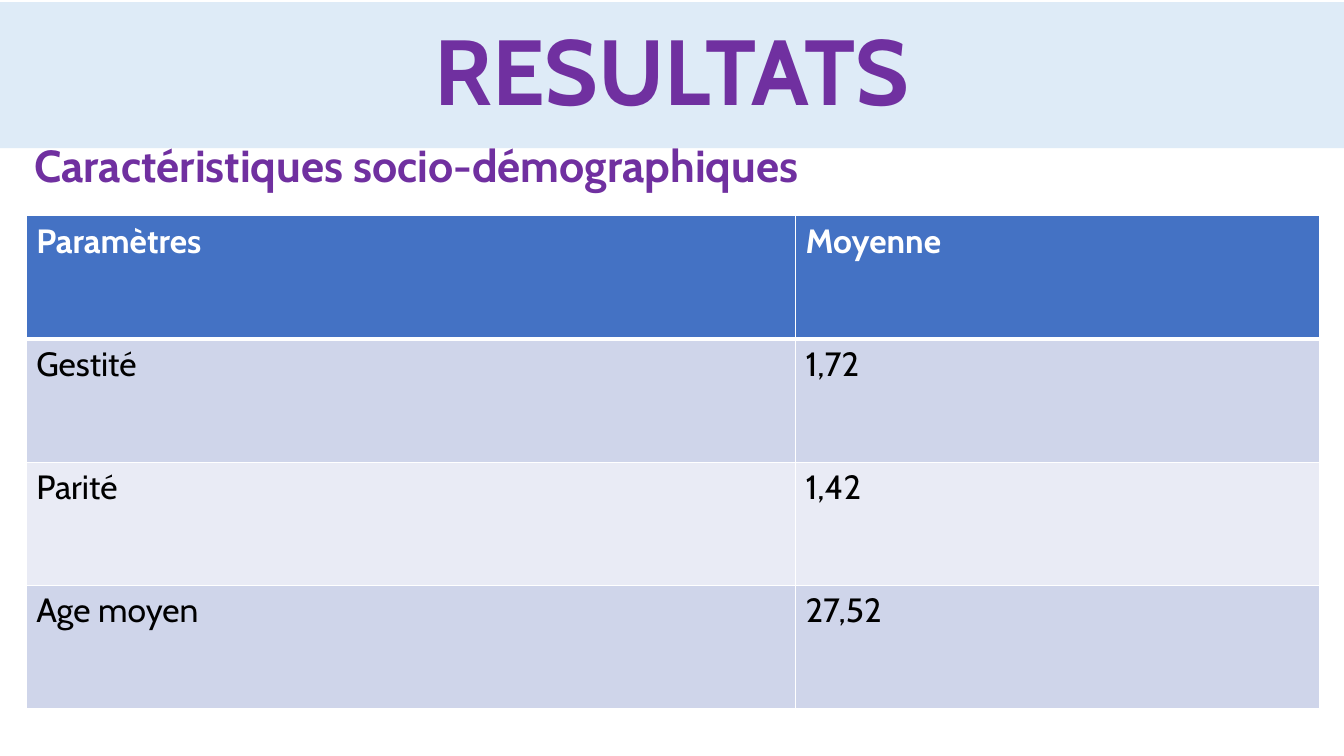
from lxml import etree
from pptx import Presentation
from pptx.dml.color import RGBColor
from pptx.enum.text import MSO_ANCHOR, MSO_AUTO_SIZE, PP_ALIGN
from pptx.oxml.ns import qn
from pptx.util import Inches, Pt

CENTER, LEFT = PP_ALIGN.CENTER, PP_ALIGN.LEFT
MIDDLE, TOP = MSO_ANCHOR.MIDDLE, MSO_ANCHOR.TOP
NO_FIT = MSO_AUTO_SIZE.NONE
FONT = "Cabin"
COLORS = {"banner": "DEEBF7", "heading": "7030A0", "header": "4472C4",
          "odd": "CFD5EA", "even": "E9EBF5", "white": "FFFFFF", "black": "000000"}
ROWS = [("Paramètres", "Moyenne"), ("Gestité", "1,72"),
        ("Parité", "1,42"), ("Age moyen", "27,52")]
COLUMN_WIDTHS = (7.63, 5.2)


def rgb(name):
    """Return the named colour."""
    return RGBColor.from_string(COLORS[name])


def set_text(tf, text, size, color, bold, align=LEFT, spacing=None):
    """Write one formatted paragraph into a text frame."""
    tf.text = text
    p = tf.paragraphs[0]
    p.alignment = align
    if spacing:
        p.line_spacing = spacing
    font = p.runs[0].font
    font.name, font.size, font.bold = FONT, Pt(size), bold
    font.color.rgb = rgb(color)


def add_banner(s, box):
    """Place the title as a full-width coloured band."""
    sp = s.shapes.title
    sp.left, sp.top, sp.width, sp.height = map(Inches, box)
    sp.fill.solid()
    sp.fill.fore_color.rgb = rgb("banner")
    tf = sp.text_frame
    tf.auto_size, tf.vertical_anchor = NO_FIT, MIDDLE
    set_text(tf, "RESULTATS", 66, "heading", True, CENTER, 0.9)


def add_subtitle(s, box):
    """Place the section heading above the table."""
    tf = s.shapes.add_textbox(*map(Inches, box)).text_frame
    tf.word_wrap, tf.vertical_anchor = True, TOP
    set_text(tf, "Caractéristiques socio-démographiques", 32, "heading", True, LEFT, 0.9)


def set_borders(cell, widths):
    """Draw white borders of the given point widths, keyed by side."""
    tc_pr = cell._tc.get_or_add_tcPr()
    for side, width in widths.items():
        line = etree.SubElement(tc_pr, qn(f"a:ln{side}"), w=str(Pt(width)))
        fill = etree.SubElement(line, qn("a:solidFill"))
        etree.SubElement(fill, qn("a:srgbClr"), val=COLORS["white"])


def add_results_table(s, box):
    """Place the table of means with a header and banded rows."""
    table = s.shapes.add_table(len(ROWS), len(COLUMN_WIDTHS), *map(Inches, box)).table
    for column, width in zip(table.columns, COLUMN_WIDTHS):
        column.width = Inches(width)
    for i, row in enumerate(ROWS):
        is_header = i == 0
        fill = "header" if is_header else "odd" if i % 2 else "even"
        for j, text in enumerate(row):
            cell = table.cell(i, j)
            set_borders(cell, {"L": 1, "R": 1, "T": 3 if i == 1 else 1,
                               "B": 3 if is_header else 1})
            cell.fill.solid()
            cell.fill.fore_color.rgb = rgb(fill)
            set_text(cell.text_frame, text, 24, "white" if is_header else "black", is_header)


def main():
    """Build the results slide and save it."""
    prs = Presentation()
    prs.slide_width, prs.slide_height = Inches(13.33), Inches(7.5)
    s = prs.slides.add_slide(prs.slide_layouts[5])
    add_banner(s, (0, 0.02, 13.33, 1.45))
    add_subtitle(s, (0.24, 1.38, 12.84, 0.7))
    add_results_table(s, (0.26, 2.14, sum(COLUMN_WIDTHS), 4.89))
    prs.save("out.pptx")


if __name__ == "__main__":
    main()
